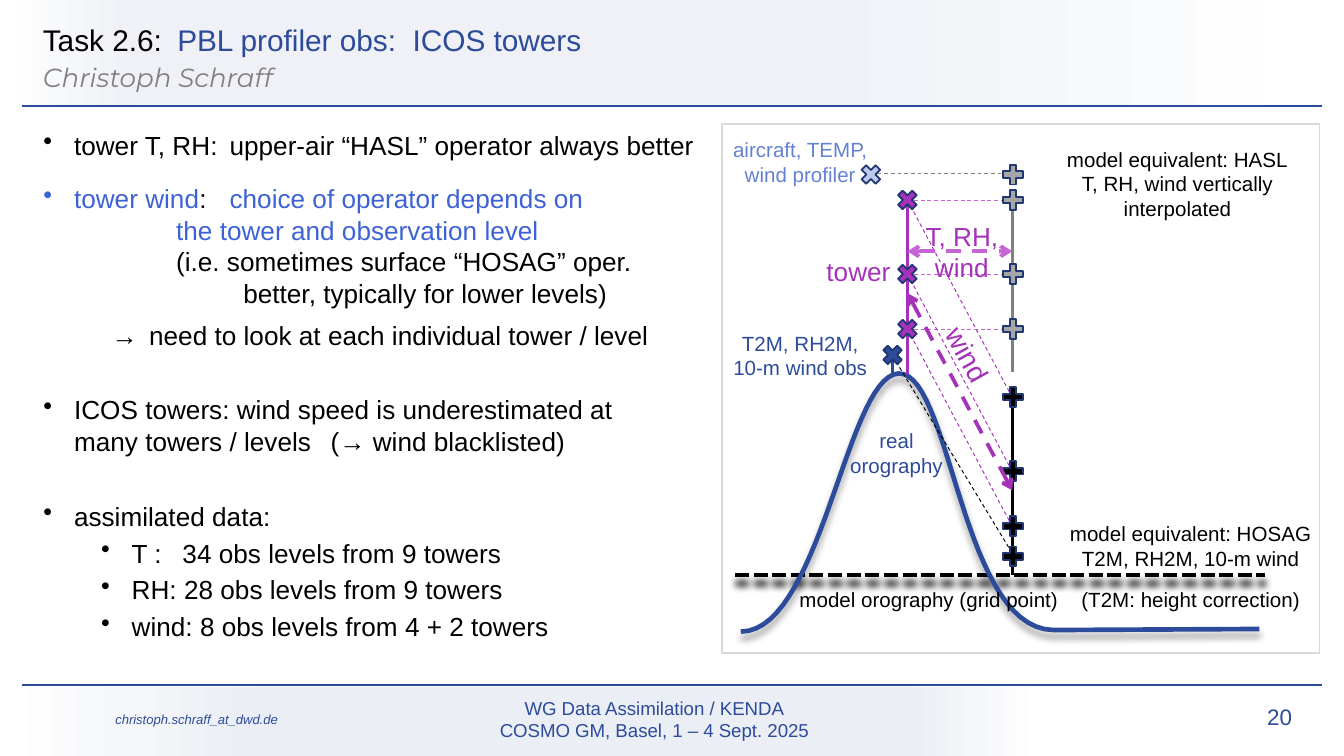
import pptx
import pptx.dml.color
import pptx.enum.dml
import pptx.enum.shapes
import pptx.enum.text
import pptx.oxml
import pptx.oxml.ns
import pptx.util

Cm, Pt = pptx.util.Cm, pptx.util.Pt
SHAPE = pptx.enum.shapes.MSO_SHAPE
DASH = pptx.enum.dml.MSO_LINE.DASH
SHORT_DASH = pptx.enum.dml.MSO_LINE.SQUARE_DOT
ALIGN = pptx.enum.text.PP_ALIGN
ANCHOR = pptx.enum.text.MSO_ANCHOR
AUTO = pptx.enum.text.MSO_AUTO_SIZE

BLACK, NAVY, BLUE, PURPLE, ORCHID = "000000", "2D4B9B", "3C62D6", "A532B8", "C565D5"
GREY, LIGHT_GREY, OUTLINE = "808080", "A6A6A6", "213773"


def rgb(value):
    return pptx.dml.color.RGBColor.from_string(value)


def append_xml(parent, tag, **attributes):
    child = pptx.oxml.parse_xml(f'<a:{tag} {pptx.oxml.ns.nsdecls("a")}/>')
    for name, value in attributes.items():
        child.set(name, str(value))
    parent.append(child)
    return child


def assign(target, values):
    for name, value in values.items():
        setattr(target, name, value)


def bezier(start, first, second, end, steps=30):
    """Points after start along a cubic curve."""
    for step in range(1, steps + 1):
        t = step / steps
        weights = ((1 - t) ** 3, 3 * t * (1 - t) ** 2, 3 * t * t * (1 - t), t ** 3)
        points = (start, first, second, end)
        yield tuple(sum(w * p[axis] for w, p in zip(weights, points)) for axis in (0, 1))


class SlideWriter:
    font = "Arial"

    def __init__(self, page):
        self.page = page

    def outline(self, line, color, width, dash=None):
        line.color.rgb = rgb(color)
        assign(line, {"width": Pt(width), "dash_style": dash})

    def cast_shadow(self, effects, opacity, distance):
        shadow = append_xml(effects, "outerShdw", blurRad=Pt(4), dist=Pt(distance),
                            dir=5400000, algn="t", rotWithShape=0)
        color = append_xml(shadow, "srgbClr", val=BLACK)
        append_xml(color, "alpha", val=opacity * 1000)

    def shape(self, kind, left, top, width, height, fill=None, line=None):
        """fill is one colour, or a pair for a left-to-right gradient."""
        shape = self.page.shapes.add_shape(kind, Cm(left), Cm(top), Cm(width), Cm(height))
        shape.shadow.inherit = False
        if fill is None:
            shape.fill.background()
        elif isinstance(fill, str):
            shape.fill.solid()
            shape.fill.fore_color.rgb = rgb(fill)
        else:
            shape.fill.gradient()
            shape.fill.gradient_angle = 0
            for stop, color in zip(shape.fill.gradient_stops, fill):
                stop.color.rgb = rgb(color)
        if line:
            self.outline(shape.line, line, 1)
        else:
            shape.line.fill.background()

    def marker(self, kind, x, y, fill, size=0.51):
        self.shape(kind, x - size / 2, y - size / 2, size, size, fill, OUTLINE)

    def line(self, x1, y1, x2, y2, color, width, dash=None, arrows=False, shadow=None):
        connector = self.page.shapes.add_connector(
            pptx.enum.shapes.MSO_CONNECTOR.STRAIGHT, Cm(x1), Cm(y1), Cm(x2), Cm(y2))
        self.outline(connector.line, color, width, dash)
        properties = connector.element.spPr
        if arrows:
            for end in ("headEnd", "tailEnd"):
                append_xml(properties.find(pptx.oxml.ns.qn("a:ln")), end, type="arrow")
        effects = append_xml(properties, "effectLst")
        if shadow:
            self.cast_shadow(effects, *shadow)

    def curve(self, points, color, width, shadow):
        points = [(Cm(x), Cm(y)) for x, y in points]
        builder = self.page.shapes.build_freeform(*points[0], scale=1.0)
        builder.add_line_segments(points[1:], close=False)
        shape = builder.convert_to_shape()
        shape.fill.background()
        self.outline(shape.line, color, width)
        shape.shadow.inherit = False
        self.cast_shadow(shape.element.spPr.find(pptx.oxml.ns.qn("a:effectLst")), *shadow)

    def paragraph(self, para, spans, size, color, align=ALIGN.LEFT, before=0, indent=(0, 0),
                  bullet=False, tabs=(), font=None, italic=False):
        """spans is a string, or a list of (text, colour)."""
        properties = para._p.get_or_add_pPr()
        properties.set("marL", str(Cm(indent[0])))
        properties.set("indent", str(Cm(indent[1])))
        if bullet:
            append_xml(properties, "buChar", char="•")
        if tabs:
            stops = append_xml(properties, "tabLst")
            for stop in tabs:
                append_xml(stops, "tab", pos=Cm(stop), algn="l")
        assign(para, {"alignment": align, "space_before": Pt(before)})
        for text, span_color in [(spans, color)] if isinstance(spans, str) else spans:
            span = para.add_run()
            span.text = text
            assign(span.font, {"name": font or self.font, "size": Pt(size), "italic": italic})
            span.font.color.rgb = rgb(span_color)

    def text(self, place, paragraphs, size=11, color=BLACK, box=None, inset=(0.1, 0.1),
             anchor=ANCHOR.TOP, grow=True, rotation=0, **style):
        """paragraphs holds strings, or (spans, paragraph settings)."""
        left, top, width, height = map(Cm, place)
        box = box or self.page.shapes.add_textbox(left, top, width, height)
        assign(box, {"left": left, "top": top, "width": width, "height": height,
                     "rotation": rotation})
        frame = box.text_frame
        side, edge = map(Cm, inset)
        assign(frame, {"margin_left": side, "margin_right": side, "margin_top": edge,
                       "margin_bottom": edge, "word_wrap": True, "vertical_anchor": anchor,
                       "auto_size": AUTO.SHAPE_TO_FIT_TEXT if grow else AUTO.NONE})
        for number, item in enumerate(paragraphs):
            para = frame.add_paragraph() if number else frame.paragraphs[0]
            spans, own = (item, {}) if isinstance(item, str) else item
            self.paragraph(para, spans, **{"size": size, "color": color, **style, **own})

    def label(self, place, paragraphs, **style):
        self.text(place, paragraphs, align=ALIGN.CENTER, indent=(0.18, 0), **style)


def draw_frame(slide):
    for top, height, tint, left, right, end in ((0, 1.98, "EFF1F7", 2.49, 15.2, 25.1),
                                                (12.98, 1.31, "EBEEF5", 4.85, 17.22, 19.68)):
        slide.shape(SHAPE.RECTANGLE, left, top, right - left, height, tint)
        slide.shape(SHAPE.RECTANGLE, right, top, end - right, height, (tint, "FFFFFF"))
        slide.shape(SHAPE.RECTANGLE, 0, top, left, height, ("FFFFFF", tint))
    for y in (2.01, 12.95):
        slide.line(0.41, y, 24.99, y, NAVY, 1)
    footer = {"color": NAVY, "anchor": ANCHOR.MIDDLE, "grow": False, "inset": (0.25, 0.05)}
    slide.text((23.22, 13.16, 1.45, 0.76), ["20"], size=12, align=ALIGN.RIGHT, **footer)
    slide.text((1.93, 13.16, 5.31, 0.86), ["christoph.schraff_at_dwd.de"], size=7,
               italic=True, **footer)
    slide.text((5.89, 13.21, 12.95, 0.76), ["WG Data Assimilation / KENDA",
               "COSMO GM, Basel, 1 – 4 Sept. 2025"], size=10, align=ALIGN.CENTER, **footer)
    title = slide.page.shapes.title
    title.element.getparent().append(title.element)
    slide.text((0.71, 0.33, 16.21, 1.5), [
        ([("Task 2.6:\t", BLACK), ("PBL profiler obs:  ICOS towers", NAVY)], {"tabs": (2.54,)}),
        ("Christoph Schraff", {"size": 14, "color": GREY, "font": "Montserrat",
                               "italic": True, "before": 2}),
    ], size=16, box=title, anchor=ANCHOR.MIDDLE, grow=False)


def draw_bullets(slide):
    top = {"bullet": True, "indent": (0.79, -0.58)}
    sub = {"bullet": True, "indent": (1.88, -0.58), "before": 3}
    tabs = (0.74, 3.73)
    slide.text((0.51, 2.34, 13.11, 4.45), [
        ("tower T, RH:\tupper-air “HASL” operator always better", {**top, "tabs": tabs}),
        ([("tower wind", BLUE), (":\t", BLACK), ("choice of operator depends on", BLUE)],
         {**top, "tabs": tabs, "before": 12}),
        ("the tower and observation level", {"indent": (2.72, 0), "color": BLUE}),
        ("(i.e. sometimes surface “HOSAG” oper.", {"indent": (2.72, 0)}),
        ("better, typically for lower levels)", {"indent": (3.99, 0)}),
        ("→\tneed to look at each individual tower / level",
         {"indent": (2.21, -0.71), "before": 6}),
    ], size=14)
    slide.text((0.51, 7.34, 11.66, 1.4), [
        ("ICOS towers: wind speed is underestimated at many towers / levels\t(→ wind blacklisted)",
         {**top, "tabs": (5.64,)})], size=14)
    slide.text((0.51, 9.35, 11.3, 2.92), [
        ("assimilated data:", top),
        ("T :\t34 obs levels from 9 towers", {**sub, "tabs": (2.84,)}),
        ("RH: 28 obs levels from 9 towers", sub),
        ("wind: 8 obs levels from 4 + 2 towers", sub)], size=14)


def draw_orography(slide):
    slide.line(13.89, 10.87, 23.9, 10.87, BLACK, 2.5, SHORT_DASH, shadow=(100, 4))
    foot, peak, valley = (14, 11.94), (16.99, 7.06), (19.91, 11.91)
    slide.curve([foot, *bezier(foot, (15.52, 11.94), (16, 7.09), peak),
                 *bezier(peak, (17.98, 7.06), (18.16, 11.89), valley), (23.8, 11.89)],
                NAVY, 2.5, shadow=(40, 3))
    slide.text((14.83, 11, 5.89, 0.66), ["model orography (grid point)"], indent=(0.18, 0))
    slide.label((15.7, 8, 2.31, 1.14), ["real", "orography"], color=NAVY)


def draw_observations(slide):
    tower_x, model_x, surface_x, aircraft_x = 17.15, 19.13, 16.87, 16.46
    levels, drop = (3.78, 5.18, 6.22), 3.73
    plus, cross = SHAPE.MATH_PLUS, SHAPE.MATH_MULTIPLY

    for y in levels:
        slide.line(tower_x, y, model_x, y, ORCHID, 0.5, DASH)
    slide.line(model_x, 3.73, model_x, 7.04, GREY, 1.5)
    for y in levels:
        slide.marker(plus, model_x + 0.02, y, LIGHT_GREY)
        slide.line(tower_x, y, model_x, y + drop, PURPLE, 0.5, DASH)
    slide.line(model_x, 7.49, model_x, 10.69, BLACK, 1.5)
    for y in levels:
        slide.marker(plus, model_x + 0.02, y + drop, BLACK)
    slide.label((14.66, 4.72, 2.95, 0.81), ["tower"], size=14, color=PURPLE)
    slide.line(tower_x, 3.86, tower_x, 7.06, PURPLE, 1.5)
    for y in levels:
        slide.marker(cross, tower_x, y, PURPLE)

    slide.label((19.71, 9.75, 5.41, 1.93), ["model equivalent: HOSAG", "T2M, RH2M, 10-m wind",
                ("(T2M: height correction)", {"before": 9})], inset=(0, 0.1))
    slide.line(surface_x, 6.73, 19.18, 10.54, BLACK, 0.5, DASH)
    slide.line(model_x, 10.46, model_x, 10.87, BLACK, 1.5)
    slide.marker(plus, model_x + 0.02, 10.52, BLACK)
    slide.label((13.56, 6.15, 2.95, 1.14), ["T2M, RH2M, 10-m wind obs"], color=NAVY)
    slide.line(surface_x, 6.68, surface_x, 7.06, NAVY, 1.5)
    slide.marker(cross, surface_x, 6.71, NAVY)

    slide.label((19.41, 2.67, 5.51, 1.6),
                ["model equivalent: HASL", "T, RH, wind vertically interpolated"])
    slide.line(aircraft_x, 3.28, 19.18, 3.28, GREY, 0.5, DASH)
    slide.marker(plus, model_x + 0.02, 3.3, LIGHT_GREY)
    slide.label((13.56, 2.49, 2.95, 1.6), ["aircraft, TEMP,", "wind profiler"], color="6481D2")
    slide.marker(cross, aircraft_x, 3.3, "BECAEC")

    slide.line(tower_x, 4.75, model_x, 4.75, ORCHID, 2, DASH, arrows=True)
    slide.line(tower_x, 5.54, model_x, 9.27, PURPLE, 2, DASH, arrows=True)
    slide.label((16.97, 4.06, 2.24, 1.4), ["T, RH,", "wind"], size=14, color=PURPLE)
    slide.label((16.99, 6.2, 2.51, 0.84), ["wind"], size=15, color=PURPLE, rotation=60.8)
    slide.shape(SHAPE.RECTANGLE, 13.64, 2.34, 11.3, 10.01, line="D9D9D9")


def main():
    deck = pptx.Presentation()
    assign(deck, {"slide_width": Cm(25.4), "slide_height": Cm(14.29)})
    slide = SlideWriter(deck.slides.add_slide(deck.slide_layouts.get_by_name("Title Only")))
    draw_frame(slide)
    draw_orography(slide)
    draw_observations(slide)
    draw_bullets(slide)
    deck.save("out.pptx")


if __name__ == "__main__":
    main()
